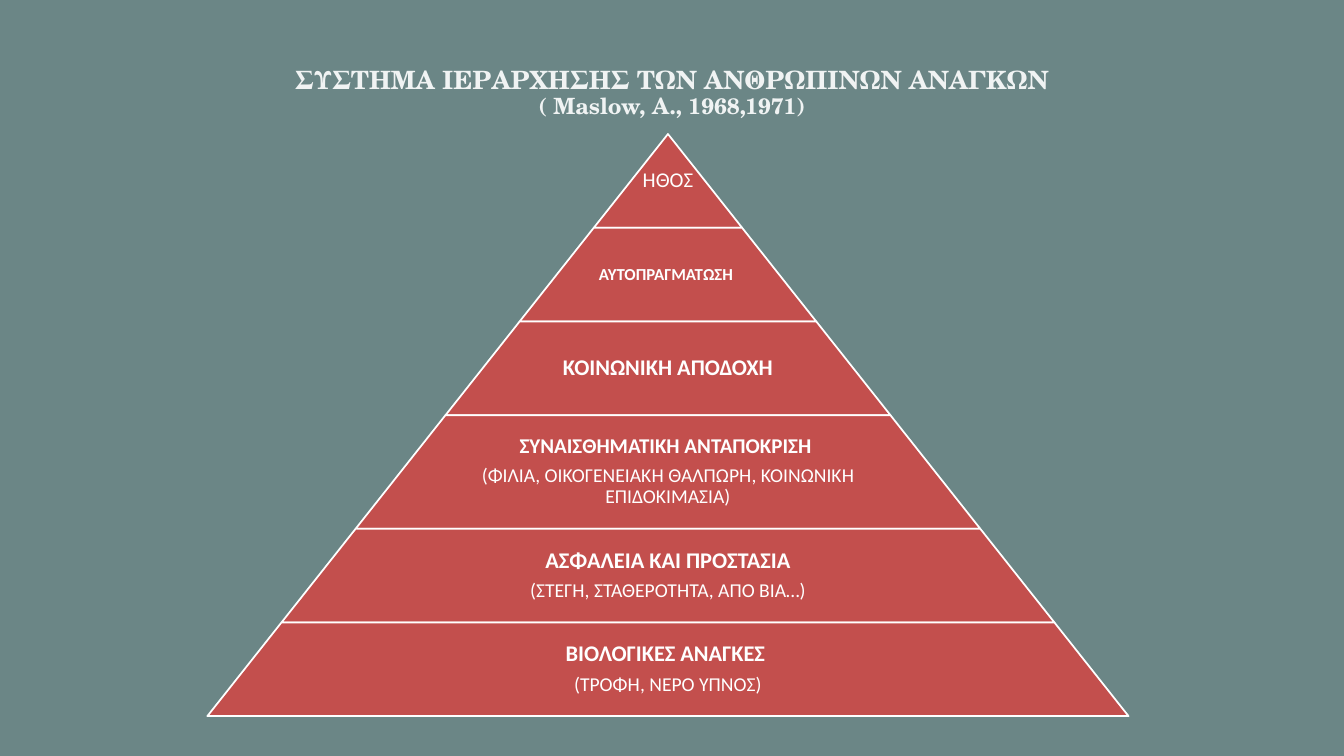
from dataclasses import dataclass

from lxml.etree import SubElement
from pptx import Presentation
from pptx.dml.color import RGBColor
from pptx.enum.shapes import MSO_SHAPE
from pptx.enum.text import MSO_ANCHOR, PP_ALIGN
from pptx.oxml.ns import qn
from pptx.util import Inches, Pt


@dataclass(frozen=True)
class Theme:
    background: str = "6B8686"
    level: str = "C34F4D"
    white: str = "FFFFFF"
    title: str = "F0F3F3"
    shadow: str = "000000"
    title_font: str = "TeX Gyre Schola"
    body_font: str = "Calibri"
    title_size: int = 18
    source_size: int = 16
    detail_size: int = 14
    edge: float = 1.25


THEME = Theme()
WIDTH, HEIGHT = Inches(13.33), Inches(7.5)

# Pyramid geometry, as shares of the slide
CENTER = 0.497 * WIDTH
APEX = 0.1773 * HEIGHT
SLOPE = 0.791          # side inset per unit of height
LABEL_SHARE = 0.65     # label width against level width
ROW, TALL_ROW = 0.124 * HEIGHT, 0.15 * HEIGHT

# Heading, heading size, bold, detail, height; from the apex down
LEVELS = [
    ("ΉΘΟΣ", 15, False, None, ROW),
    ("ΑΥΤΟΠΡΑΓΜΑΤΩΣΗ ", 12, True, None, ROW),
    ("ΚΟΙΝΩΝΙΚΗ ΑΠΟΔΟΧΗ", 16, True, None, ROW),
    ("ΣΥΝΑΙΣΘΗΜΑΤΙΚΗ ΑΝΤΑΠΟΚΡΙΣΗ ", 15, True,
     "(ΦΙΛΙΑ, ΟΙΚΟΓΕΝΕΙΑΚΗ ΘΑΛΠΩΡΗ, ΚΟΙΝΩΝΙΚΗ ΕΠΙΔΟΚΙΜΑΣΙΑ)", TALL_ROW),
    ("ΑΣΦΑΛΕΙΑ ΚΑΙ ΠΡΟΣΤΑΣΙΑ", 16, True, "(ΣΤΕΓΗ, ΣΤΑΘΕΡΟΤΗΤΑ, ΑΠΟ ΒΙΑ…)", ROW),
    ("ΒΙΟΛΟΓΙΚΕΣ ΑΝΑΓΚΕΣ ", 16, True, "(ΤΡΟΦΗ, ΝΕΡΟ ΥΠΝΟΣ)", ROW),
]


def color(value):
    return RGBColor.from_string(value)


def add_text_frame(page, center, top, width, height, inset):
    """Add a wrapped, middle-anchored text box around a centre line."""
    box = page.shapes.add_textbox(int(center - width / 2), int(top), int(width), int(height))
    frame = box.text_frame
    frame.word_wrap = True
    frame.vertical_anchor = MSO_ANCHOR.MIDDLE
    frame.margin_left = frame.margin_right = Inches(inset)
    frame.margin_top = frame.margin_bottom = Inches(inset)
    return frame


def style_paragraph(para, font, size, bold, fill):
    para.alignment = PP_ALIGN.CENTER
    para.line_spacing = 0.9
    para.font.name = font
    para.font.size = Pt(size)
    para.font.bold = bold
    para.font.color.rgb = color(fill)


def add_text_shadow(span):
    effects = SubElement(span.font._element, qn("a:effectLst"))
    shadow = SubElement(effects, qn("a:outerShdw"), blurRad="38100",
                        dist="25400", dir="2700000", algn="tl")
    tint = SubElement(shadow, qn("a:srgbClr"), val=THEME.shadow)
    SubElement(tint, qn("a:alpha"), val="50000")


def add_title(page):
    frame = add_text_frame(page, WIDTH / 2, 0.04 * HEIGHT, 0.675 * WIDTH, HEIGHT / 6, 0.05)
    para = frame.paragraphs[0]
    style_paragraph(para, THEME.title_font, THEME.title_size, True, THEME.title)
    heading = para.add_run()
    heading.text = "ΣΥΣΤΗΜΑ ΙΕΡΑΡΧΗΣΗΣ ΤΩΝ ΑΝΘΡΩΠΙΝΩΝ ΑΝΑΓΚΩΝ"
    para.add_line_break()
    source = para.add_run()
    source.text = "( Maslow, A., 1968,1971)"
    source.font.size = Pt(THEME.source_size)
    for span in (heading, source):
        add_text_shadow(span)


def add_level(page, top, width, height):
    level = page.shapes.add_shape(MSO_SHAPE.TRAPEZOID, int(CENTER - width / 2),
                                  int(top), int(width), int(height))
    level.adjustments[0] = SLOPE
    level.shadow.inherit = False
    level.fill.solid()
    level.fill.fore_color.rgb = color(THEME.level)
    level.line.color.rgb = color(THEME.white)
    level.line.width = Pt(THEME.edge)


def add_label(page, top, width, height, lines):
    frame = add_text_frame(page, CENTER, top, width, height, 0.02)
    for index, (text, size, bold) in enumerate(lines):
        para = frame.add_paragraph() if index else frame.paragraphs[0]
        para.text = text
        para.space_after = Pt(0.35 * size)
        style_paragraph(para, THEME.body_font, size, bold, THEME.white)


def add_pyramid(page):
    top = APEX
    for index, (heading, size, bold, detail, height) in enumerate(LEVELS):
        width = 2 * SLOPE * (top + height - APEX)
        add_level(page, top, width, height)
        lines = [(heading, size, bold)]
        if detail:
            lines.append((detail, THEME.detail_size, False))
        # The apex label takes the full width of its level
        add_label(page, top, width * (LABEL_SHARE if index else 1), height, lines)
        top += height


def main():
    deck = Presentation()
    deck.slide_width, deck.slide_height = WIDTH, HEIGHT
    page = deck.slides.add_slide(deck.slide_layouts[6])
    page.background.fill.solid()
    page.background.fill.fore_color.rgb = color(THEME.background)
    add_title(page)
    add_pyramid(page)
    deck.save("out.pptx")


if __name__ == "__main__":
    main()
